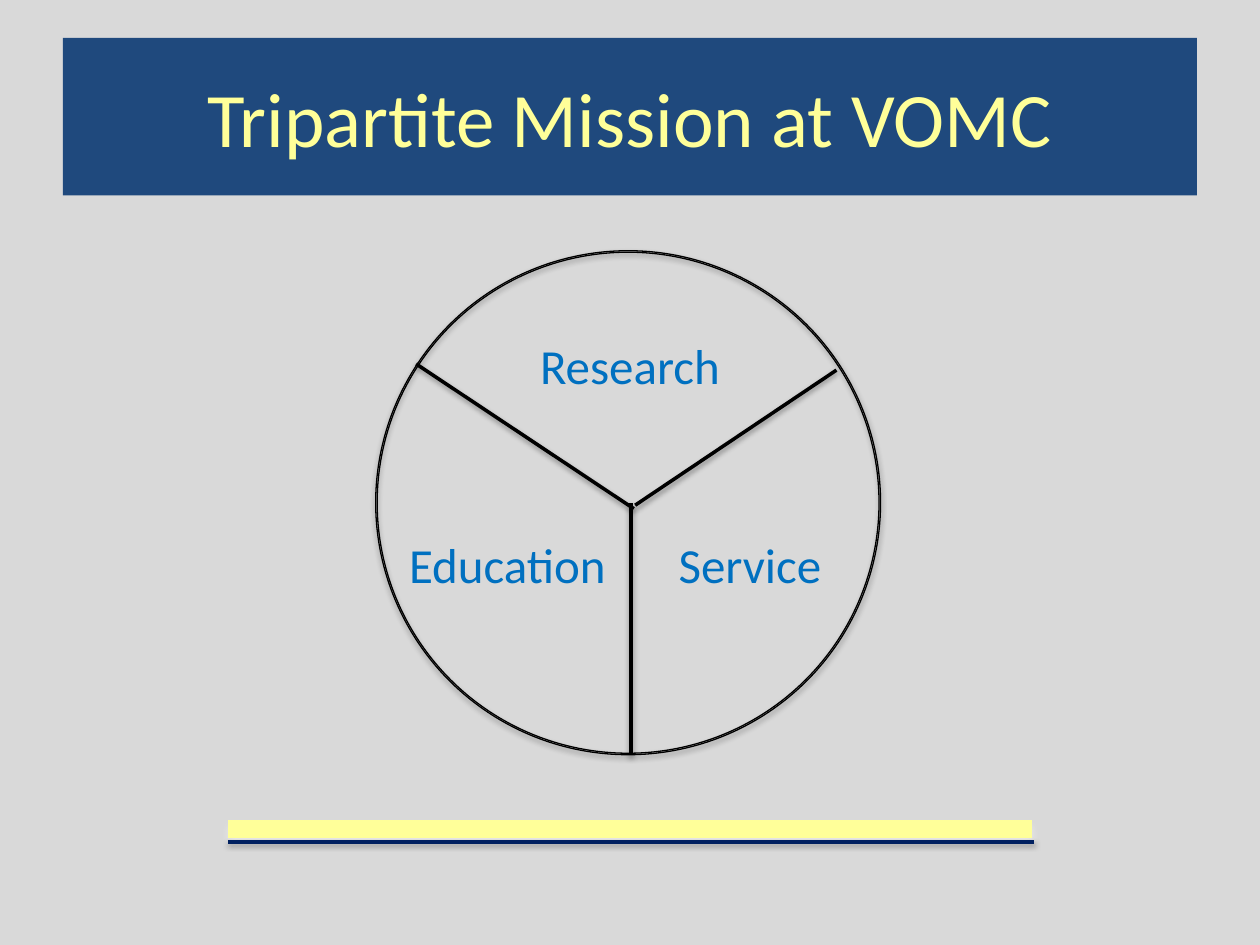
from dataclasses import dataclass

from lxml import etree
from pptx import Presentation
from pptx import util as u
from pptx.dml.color import RGBColor
from pptx.enum import shapes, text
from pptx.oxml.ns import qn


@dataclass(frozen=True)
class Theme:
    background: str = "D9D9D9"
    banner: str = "1F497D"
    title: str = "FFFF99"
    label: str = "0070C0"
    outline: str = "000000"
    rule: str = "002060"
    glow: str = "FFFFFF"
    font: str = "Calibri"
    title_size: float = 44
    label_size: float = 28


@dataclass(frozen=True)
class Shadow:
    color: str
    alpha: int
    blur: float
    dist: float


@dataclass(frozen=True)
class Line:
    x1: float
    y1: float
    x2: float
    y2: float
    color: str
    width: float
    shadow: Shadow


@dataclass(frozen=True)
class Label:
    words: str
    x: float
    y: float
    w: float
    h: float = 41.2


T = Theme()
SOFT = Shadow(T.outline, 38, 3.1, 1.6)
RING = Shadow(T.outline, 35, 3.1, 1.8)
GLOW = Shadow(T.glow, 40, 4, 3)

SPOKES = [
    Line(478, 211.5, 363, 288.7, T.outline, 2, SOFT),
    Line(237.8, 208, 362.2, 290.7, T.outline, 2, SOFT),
    Line(360.6, 287.5, 360.6, 431.5, T.outline, 2, SOFT),
]
LABELS = [
    Label("Research", 301.5, 188, 118),
    Label("Education", 226.7, 302, 128),
    Label("Service", 380.7, 302, 97.5),
]
RULES = [
    Line(130.3, 473.8, 589.5, 473.8, T.title, 10.5, GLOW),
    Line(130.3, 481.2, 591, 481.2, T.rule, 2, SOFT),
]


def rgb(color: str) -> RGBColor:
    return RGBColor.from_string(color)


def add_shadow(sp, shadow: Shadow) -> None:
    effects = etree.SubElement(sp._element.spPr, qn("a:effectLst"))
    outer = etree.SubElement(
        effects, qn("a:outerShdw"), blurRad=str(u.Pt(shadow.blur)),
        dist=str(u.Pt(shadow.dist)), dir="5400000", rotWithShape="0")
    color = etree.SubElement(outer, qn("a:srgbClr"), val=shadow.color)
    etree.SubElement(color, qn("a:alpha"), val=str(shadow.alpha * 1000))


def set_text(tf, words: str, size: float, color: str, align) -> None:
    p = tf.paragraphs[0]
    p.text = words
    p.alignment = align
    p.font.name = T.font
    p.font.size = u.Pt(size)
    p.font.color.rgb = rgb(color)


def draw_banner(s, words: str) -> None:
    sp = s.shapes.add_shape(shapes.MSO_SHAPE.RECTANGLE, u.Pt(36), u.Pt(21.6), u.Pt(648), u.Pt(90))
    sp.shadow.inherit = False
    sp.fill.solid()
    sp.fill.fore_color.rgb = rgb(T.banner)
    sp.line.fill.background()
    sp.text_frame.vertical_anchor = text.MSO_ANCHOR.MIDDLE
    set_text(sp.text_frame, words, T.title_size, T.title, text.PP_ALIGN.CENTER)


def draw_ring(s) -> None:
    sp = s.shapes.add_shape(shapes.MSO_SHAPE.DONUT, u.Pt(214.7), u.Pt(143.3), u.Pt(288.5), u.Pt(288))
    sp.adjustments[0] = 0.003
    sp.fill.background()
    sp.line.color.rgb = rgb(T.outline)
    sp.line.width = u.Pt(0.75)
    add_shadow(sp, RING)


def draw_line(s, line: Line) -> None:
    sp = s.shapes.add_connector(
        shapes.MSO_CONNECTOR.STRAIGHT,
        u.Pt(line.x1), u.Pt(line.y1), u.Pt(line.x2), u.Pt(line.y2))
    sp.line.color.rgb = rgb(line.color)
    sp.line.width = u.Pt(line.width)
    add_shadow(sp, line.shadow)


def draw_label(s, label: Label) -> None:
    sp = s.shapes.add_textbox(u.Pt(label.x), u.Pt(label.y), u.Pt(label.w), u.Pt(label.h))
    tf = sp.text_frame
    tf.word_wrap = False
    tf.auto_size = text.MSO_AUTO_SIZE.SHAPE_TO_FIT_TEXT
    set_text(tf, label.words, T.label_size, T.label, text.PP_ALIGN.LEFT)


def main() -> None:
    prs = Presentation()
    prs.slide_width, prs.slide_height = u.Pt(720), u.Pt(540)
    s = prs.slides.add_slide(prs.slide_layouts[6])
    s.background.fill.solid()
    s.background.fill.fore_color.rgb = rgb(T.background)
    draw_banner(s, "Tripartite Mission at VOMC")
    draw_ring(s)
    for spoke in SPOKES:
        draw_line(s, spoke)
    for label in LABELS:
        draw_label(s, label)
    for rule in RULES:
        draw_line(s, rule)
    prs.save("out.pptx")


if __name__ == "__main__":
    main()
